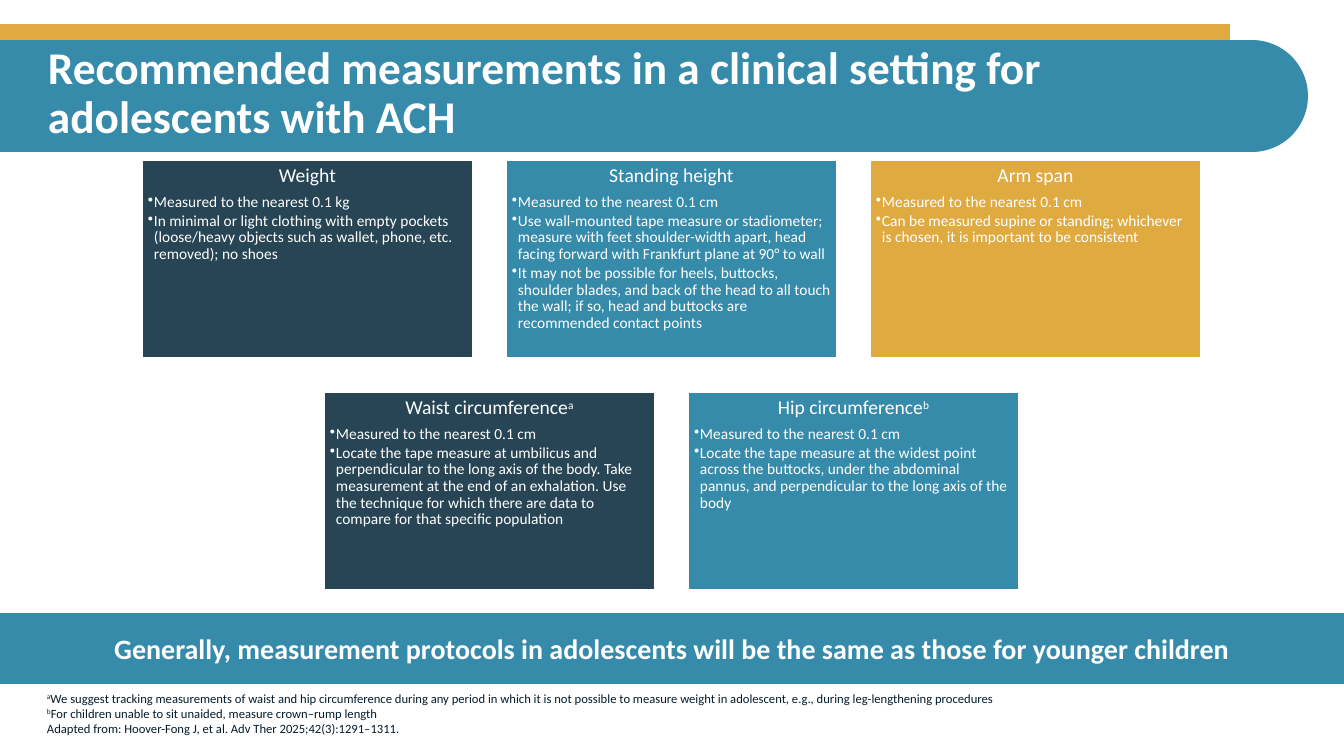
from lxml.etree import SubElement as Sub
from pptx import Presentation
from pptx.dml.color import RGBColor as Rgb
from pptx.enum.shapes import MSO_SHAPE as Kind
from pptx.enum.text import MSO_ANCHOR as Anchor, PP_ALIGN as Align
from pptx.oxml.ns import qn
from pptx.util import Pt

HUES = {"navy": "274554", "teal": "368BAB", "gold": "DFAA40", "white": "FFFFFF", "ink": "051C2C"}
SCALE = 12192000 / 1344

HEAD = {"alignment": Align.CENTER, "line_spacing": 0.9, "space_after": Pt(4.9)}
ITEM = {"alignment": Align.LEFT, "line_spacing": 0.9, "space_after": Pt(1.65), "level": 1}
MID = {"alignment": Align.CENTER}
LEFT = {"alignment": Align.LEFT}
TITLE = {"alignment": Align.LEFT, "line_spacing": 0.9}

ROWS = [
    [
        ("navy", "Weight", [
            "Measured to the nearest 0.1 kg",
            "In minimal or light clothing with empty pockets (loose/heavy objects such as wallet, phone, etc. removed); no shoes",
        ]),
        ("teal", "Standing height", [
            "Measured to the nearest 0.1 cm",
            "Use wall-mounted tape measure or stadiometer; measure with feet shoulder-width apart, head facing forward with Frankfurt plane at 90° to wall",
            "It may not be possible for heels, buttocks, shoulder blades, and back of the head to all touch the wall; if so, head and buttocks are recommended contact points",
        ]),
        ("gold", "Arm span", [
            "Measured to the nearest 0.1 cm",
            "Can be measured supine or standing; whichever is chosen, it is important to be consistent",
        ]),
    ],
    [
        ("navy", "Waist circumference^a", [
            "Measured to the nearest 0.1 cm",
            "Locate the tape measure at umbilicus and perpendicular to the long axis of the body. Take measurement at the end of an exhalation. Use the technique for which there are data to compare for that specific population",
        ]),
        ("teal", "Hip circumference^b", [
            "Measured to the nearest 0.1 cm",
            "Locate the tape measure at the widest point across the buttocks, under the abdominal pannus, and perpendicular to the long axis of the body",
        ]),
    ],
]
NOTES = [
    "^a^We suggest tracking measurements of waist and hip circumference during any period in which it is not possible to measure weight in adolescent, e.g., during leg-lengthening procedures",
    "^b^For children unable to sit unaided, measure crown–rump length",
    "Adapted from: Hoover-Fong J, et al. Adv Ther 2025;42(3):1291–1311.",
]


def px(num):
    return round(num * SCALE)


def put(item, form):
    for key, val in form.items():
        setattr(item, key, val)


class Deck:
    def __init__(self, font):
        self.font = font
        self.prs = Presentation()
        put(self.prs, {"slide_width": px(1344), "slide_height": px(756)})
        self.slide = self.prs.slides.add_slide(self.prs.slide_layouts[6])

    def block(self, kind, place, hue, edge=None):
        shape = self.slide.shapes.add_shape(kind, *map(px, place))
        shape.shadow.inherit = False
        shape.fill.solid()
        shape.fill.fore_color.rgb = Rgb.from_string(HUES[hue])
        if edge:
            shape.line.color.rgb = Rgb.from_string(HUES[edge])
            shape.line.width = Pt(1)
        else:
            shape.line.fill.background()
        return shape

    def label(self, place, anchor, lines, **look):
        box = self.slide.shapes.add_textbox(*map(px, place))
        self.frame(box, anchor, 10, 5)
        self.fill(box, lines, **look)

    def frame(self, shape, anchor, side, edge):
        put(shape.text_frame, {
            "word_wrap": True, "vertical_anchor": anchor,
            "margin_left": px(side), "margin_right": px(side),
            "margin_top": px(edge), "margin_bottom": px(edge),
        })

    def fill(self, shape, lines, **look):
        paras = shape.text_frame.paragraphs
        for idx, line in enumerate(lines):
            para = shape.text_frame.add_paragraph() if idx else paras[0]
            self.words(para, line, **look)

    def words(self, para, text, form, size, hue="white", bold=False):
        put(para, form)
        for idx, part in enumerate(text.split("^")):
            if not part:
                continue
            run = para.add_run()
            run.text = part
            put(run.font, {"name": self.font, "size": Pt(size), "bold": bold})
            run.font.color.rgb = Rgb.from_string(HUES[hue])
            if idx % 2:
                run._r.get_or_add_rPr().set("baseline", "30000")

    def bullet(self, para):
        props = para._p.get_or_add_pPr()
        props.set("marL", str(px(6)))
        props.set("indent", str(-px(6)))
        Sub(props, qn("a:buChar")).set("char", "•")

    def card(self, place, hue, head, items):
        shape = self.block(Kind.RECTANGLE, place, hue, "white")
        self.frame(shape, Anchor.TOP, 6, 6)
        self.fill(shape, [head], form=HEAD, size=14)
        for item in items:
            para = shape.text_frame.add_paragraph()
            self.words(para, item, form=ITEM, size=11)
            self.bullet(para)

    def title(self, place, lines):
        box = self.slide.shapes.add_textbox(*map(px, place))
        self.frame(box, Anchor.MIDDLE, 10, 5)
        para = box.text_frame.paragraphs[0]
        for idx, line in enumerate(lines):
            if idx:
                para.add_line_break()
            self.words(para, line, form=TITLE, size=32.4, bold=True)


def main():
    deck = Deck("Calibri")
    deck.block(Kind.RECTANGLE, (0, 24, 1230, 16), "gold")
    band = deck.block(Kind.ROUND_2_SAME_RECTANGLE, (598, -558, 112, 1308), "teal")
    band.rotation = 270
    band.adjustments[0], band.adjustments[1] = 0, 0.5

    for row, cards in enumerate(ROWS):
        for col, card in enumerate(cards):
            deck.card((142 + 182 * row + 364 * col, 160 + 232 * row, 331, 198), *card)

    bar = deck.block(Kind.RECTANGLE, (0, 613, 1344, 71), "teal")
    deck.frame(bar, Anchor.MIDDLE, 80, 5)
    deck.fill(bar, ["Generally, measurement protocols in adolescents will be the same as those for younger children"],
              form=MID, size=20, bold=True)
    deck.title((38, 39, 1243, 111), ["Recommended measurements in a clinical setting for ", "adolescents with ACH"])
    deck.label((37, 676, 1076, 65), Anchor.BOTTOM, NOTES, form=LEFT, size=9, hue="ink")
    deck.prs.save("out.pptx")


if __name__ == "__main__":
    main()
